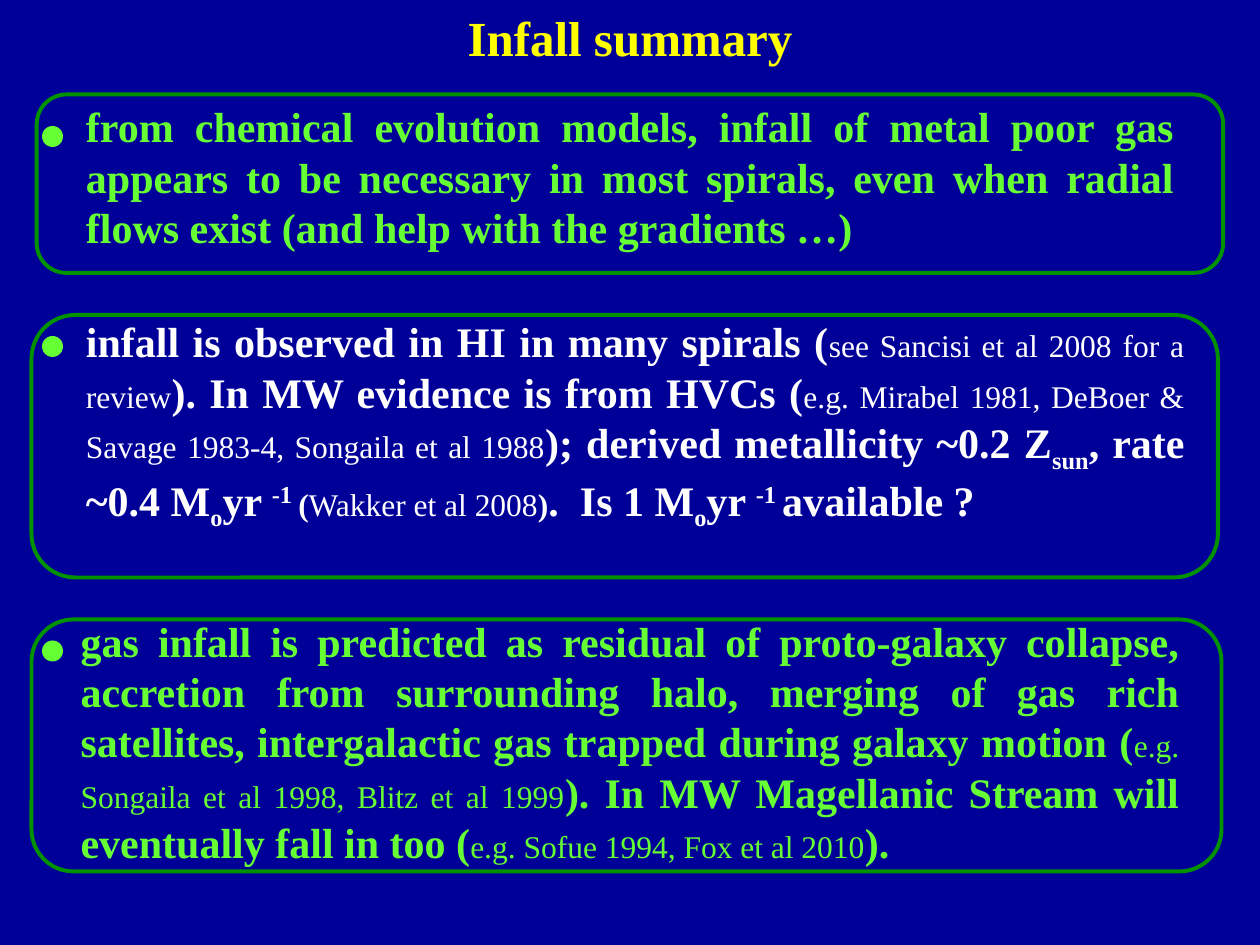
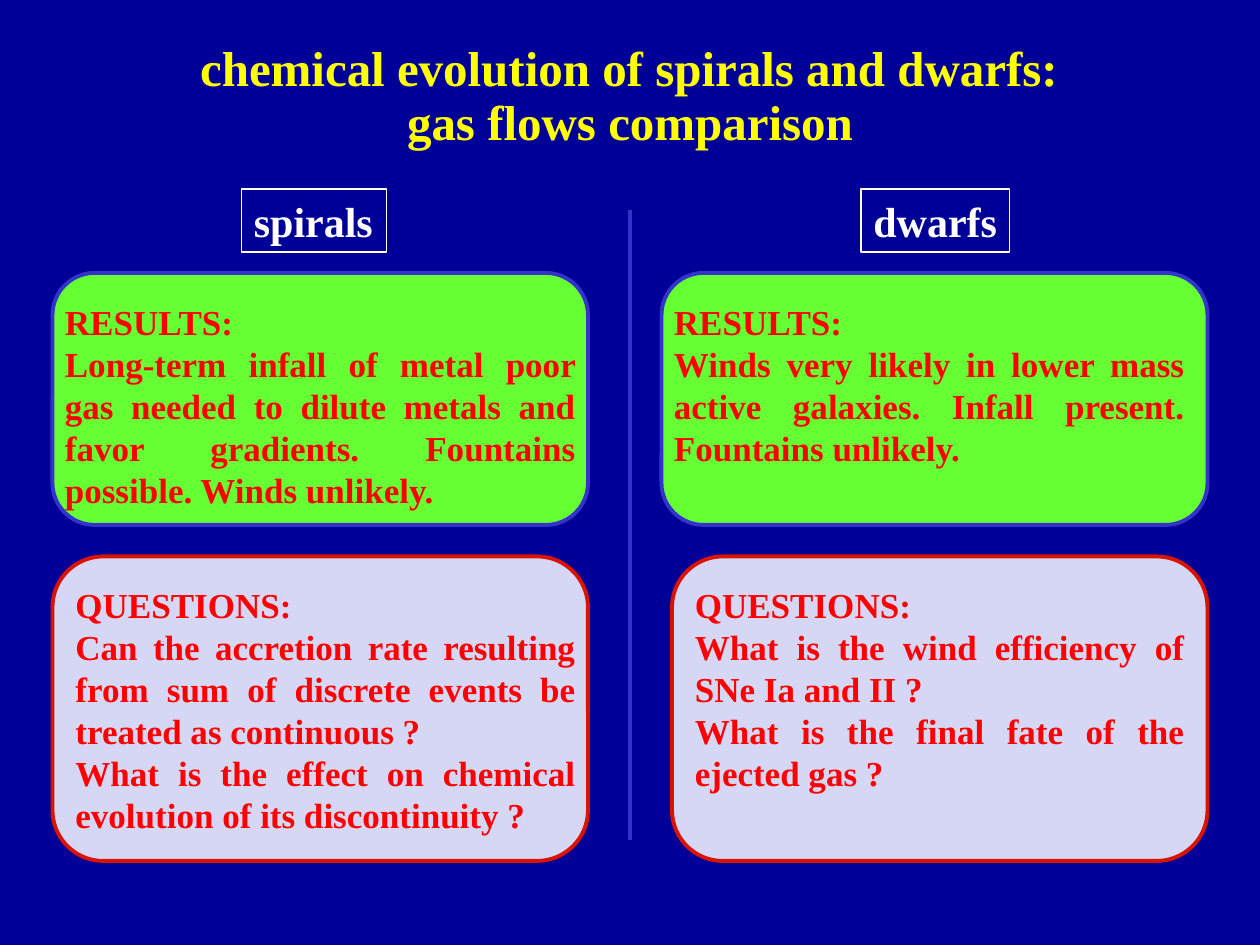
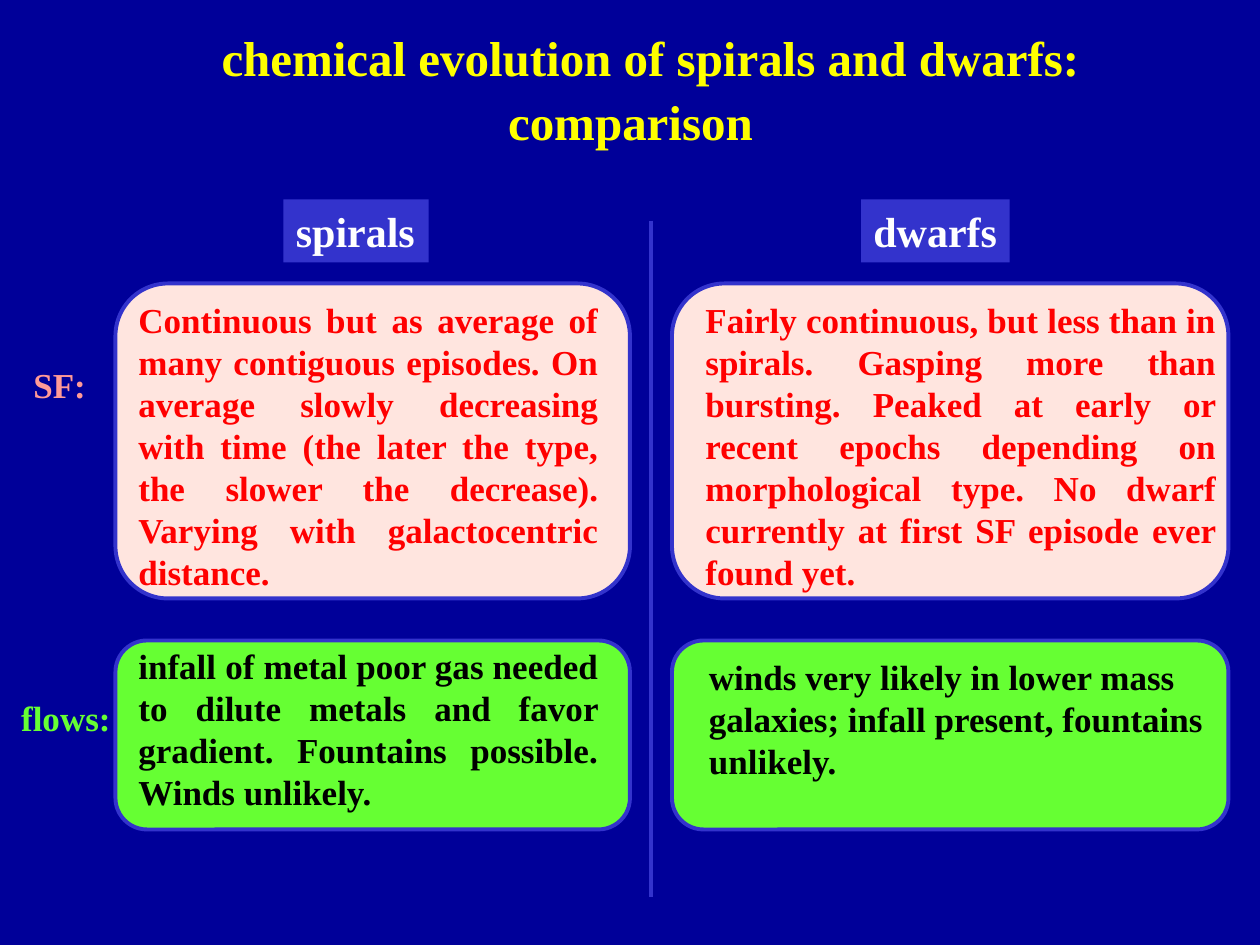
from typing import NamedTuple, Optional

from lxml import etree
from pptx import Presentation
from pptx.dml.color import RGBColor
from pptx.enum import shapes, text
from pptx.oxml.ns import qn
from pptx.util import Pt

# Shared look
NAVY = RGBColor(0x00, 0x00, 0x99)
YELLOW = RGBColor(0xFF, 0xFF, 0x00)
WHITE = RGBColor(0xFF, 0xFF, 0xFF)
BLACK = RGBColor(0x00, 0x00, 0x00)
RED = RGBColor(0xFF, 0x00, 0x00)
LIME = RGBColor(0x66, 0xFF, 0x33)
GREEN = RGBColor(0x00, 0x92, 0x00)
INDIGO = RGBColor(0x33, 0x33, 0xCC)
LAVENDER = RGBColor(0xD6, 0xD6, 0xF5)
BRICK = RGBColor(0xDA, 0x13, 0x01)
BLUSH = RGBColor(0xFF, 0xE5, 0xDF)
SALMON = RGBColor(0xFF, 0x9A, 0x97)

FONT = "Times New Roman"
TITLE_SIZE, LARGE, MEDIUM, SMALL = 28, 24, 20, 18
RULE_WIDTH = 2.25
SUB, SUPER = -25, 30
LEFT, CENTER, JUSTIFY = text.PP_ALIGN.LEFT, text.PP_ALIGN.CENTER, text.PP_ALIGN.JUSTIFY


class Box(NamedTuple):
    left: float
    top: float
    width: float
    height: float


class Span(NamedTuple):
    words: str
    size: float = LARGE
    bold: bool = True
    base: int = 0


class Line(NamedTuple):
    spans: list[Span]
    align: int = JUSTIFY


class Note(NamedTuple):
    box: Box
    lines: list[Line]
    color: RGBColor
    wrap: bool = True
    fill: Optional[RGBColor] = None
    border: Optional[RGBColor] = None


class Panel(NamedTuple):
    box: Box
    fill: Optional[RGBColor]
    border: RGBColor


def cite(words: str) -> Span:
    return Span(words, SMALL, False)


def medium(words: str, align: int = JUSTIFY) -> Line:
    return Line([Span(words, MEDIUM)], align)


def label(words: str, size: float, box: Box, color: RGBColor,
          fill: Optional[RGBColor] = None, border: Optional[RGBColor] = None) -> Note:
    return Note(box, [Line([Span(words, size)], LEFT)], color, False, fill, border)


# Drawing
def in_points(box: Box) -> list[int]:
    return [Pt(length) for length in box]


def write(frame, lines: list[Line], color: RGBColor) -> None:
    for index, line in enumerate(lines):
        paragraph = frame.add_paragraph() if index else frame.paragraphs[0]
        paragraph.alignment = line.align
        for span in line.spans:
            run = paragraph.add_run()
            run.text = span.words
            font_format = {"name": FONT, "size": Pt(span.size), "bold": span.bold}
            for attribute, value in font_format.items():
                setattr(run.font, attribute, value)
            run.font.color.rgb = color
            if span.base:
                run.font._element.set("baseline", str(span.base * 1000))


def paint(shape, fill: Optional[RGBColor], border: Optional[RGBColor], width: float) -> None:
    if fill is None:
        shape.fill.background()
    else:
        shape.fill.solid()
        shape.fill.fore_color.rgb = fill
    if border is None:
        shape.line.fill.background()
    else:
        shape.line.color.rgb = border
        shape.line.width = Pt(width)


def add_note(slide, note: Note) -> None:
    shape = slide.shapes.add_textbox(*in_points(note.box))
    paint(shape, note.fill, note.border, 0.75)
    frame = shape.text_frame
    frame_format = {"word_wrap": note.wrap, "auto_size": text.MSO_AUTO_SIZE.SHAPE_TO_FIT_TEXT}
    for attribute, value in frame_format.items():
        setattr(frame, attribute, value)
    write(frame, note.lines, note.color)


def add_panel(slide, panel: Panel, kind: int = shapes.MSO_SHAPE.ROUNDED_RECTANGLE) -> None:
    shape = slide.shapes.add_shape(kind, *in_points(panel.box))
    shape.shadow.inherit = False
    paint(shape, panel.fill, panel.border, RULE_WIDTH)


def add_divider(slide, x: float, top: float, bottom: float) -> None:
    divider = slide.shapes.add_connector(
        shapes.MSO_CONNECTOR.STRAIGHT, Pt(x), Pt(top), Pt(x), Pt(bottom))
    divider.line.color.rgb = INDIGO
    divider.line.width = Pt(RULE_WIDTH)
    etree.SubElement(divider._element.spPr, qn("a:effectLst"))


def add_titled_slide(deck, words: str, box: Box):
    slide = deck.slides.add_slide(deck.slide_layouts[5])
    title = slide.shapes.title
    for side, length in zip(("left", "top", "width", "height"), in_points(box)):
        setattr(title, side, length)
    paint(title, NAVY, None, 0)
    frame_format = {"vertical_anchor": text.MSO_ANCHOR.MIDDLE, "word_wrap": True,
                    "auto_size": text.MSO_AUTO_SIZE.NONE}
    for attribute, value in frame_format.items():
        setattr(title.text_frame, attribute, value)
    write(title.text_frame, [Line([Span(words, TITLE_SIZE)], CENTER)], YELLOW)
    return slide


def add_comparison(deck, subject: str, title_box: Box, headline_at: tuple[float, float],
                   divider: tuple[float, float, float],
                   panels: list[Panel], notes: list[Note]) -> None:
    slide = add_titled_slide(deck, subject, title_box)
    for panel in panels:
        add_panel(slide, panel)
    headline = label("chemical evolution of spirals and dwarfs:", TITLE_SIZE,
                     Box(*headline_at, 505.5, 41), YELLOW, NAVY)
    add_note(slide, headline)
    add_divider(slide, *divider)
    for note in notes:
        add_note(slide, note)


def column_heads(spirals_left: float, top: float, fill: RGBColor,
                 border: Optional[RGBColor] = None) -> list[Note]:
    heads = (("spirals", spirals_left, 83), ("dwarfs", 492, 85))
    return [label(words, LARGE, Box(left, top, width, 36), WHITE, fill, border)
            for words, left, width in heads]


# Slides
def infall_summary(deck) -> None:
    slide = add_titled_slide(deck, "Infall summary", Box(237, 0, 246, 42))
    chemical_models = [Span(
        "from chemical evolution models, infall of metal poor gas appears to be necessary "
        "in most spirals, even when radial flows exist (and help with the gradients …)")]
    solar_rate = [Span("o", base=SUB), Span("yr "), Span("-1 ", base=SUPER)]
    observed = [
        Span("infall is observed in HI in many spirals ("),
        cite("see Sancisi et al 2008 for a review"),
        Span("). In MW evidence is from HVCs ("),
        cite("e.g. Mirabel 1981, DeBoer & Savage 1983-4, Songaila et al 1988"),
        Span("); derived metallicity ~0.2 Z"), Span("sun", base=SUB),
        Span(", rate ~0.4 M"), *solar_rate,
        Span("(", SMALL), cite("Wakker et al 2008"), Span(")", SMALL),
        Span(".  Is 1 M"), *solar_rate, Span("available ?")]
    predicted = [
        Span("gas infall is predicted as residual of proto-galaxy collapse, accretion from "
             "surrounding halo, merging of gas rich satellites, intergalactic gas trapped "
             "during galaxy motion ("),
        cite("e.g. Songaila et al 1998, Blitz et al 1999"),
        Span("). In MW Magellanic Stream will eventually fall in too ("),
        cite("e.g. Sofue 1994, Fox et al 2010"), Span(").")]
    points = [
        (chemical_models, LIME, Box(42, 54, 636, 94), Box(21, 54, 678, 102), 72),
        (observed, WHITE, Box(42, 177, 642, 124), Box(18, 180, 678, 150), 192),
        (predicted, LIME, Box(39, 348, 642, 152), Box(18, 354, 680, 144), 366)]
    for spans, color, words_box, outline, dot_top in points:
        add_note(slide, Note(words_box, [Line(spans)], color))
        add_panel(slide, Panel(outline, None, GREEN))
        add_panel(slide, Panel(Box(24, dot_top, 12, 12), LIME, None), shapes.MSO_SHAPE.OVAL)


def gas_flows(deck) -> None:
    results, questions = medium("RESULTS:"), medium("QUESTIONS:", LEFT)
    panels = [
        Panel(Box(384, 318, 306, 174), LAVENDER, BRICK),
        Panel(Box(30, 318, 306, 174), LAVENDER, BRICK),
        Panel(Box(378, 156, 312, 144), LIME, INDIGO),
        Panel(Box(30, 156, 306, 144), LIME, INDIGO)]
    notes = column_heads(138, 108, NAVY, WHITE) + [
        Note(Box(30, 168, 306, 127), [results, medium(
            "Long-term infall of metal poor gas needed to dilute metals and favor gradients. "
            "Fountains possible. Winds unlikely.")], RED),
        Note(Box(378, 168, 306, 103), [results, medium(
            "Winds very likely in lower mass active galaxies. Infall present. "
            "Fountains unlikely.")], RED),
        Note(Box(36, 330, 300, 152), [
            questions,
            medium("Can the accretion rate resulting from sum of discrete events "
                   "be treated as continuous ?"),
            medium("What is the effect on chemical evolution of its discontinuity ?")], RED),
        Note(Box(390, 330, 294, 127), [
            questions,
            medium("What is the wind efficiency of SNe Ia and II ?"),
            medium("What is the final fate of the ejected gas ?")], RED)]
    add_comparison(deck, "gas flows comparison", Box(108, 48, 504, 42), (107.25, 18),
                   (360, 120, 480), panels, notes)


def star_formation_and_flows(deck) -> None:
    columns = ((384, 318), (66, 294))
    rows = ((366, 108, LIME), (162, 180, BLUSH))
    panels = [Panel(Box(left, top, width, height), fill, INDIGO)
              for top, height, fill in rows for left, width in columns]
    notes = column_heads(162, 114, INDIGO) + [
        label("SF:", MEDIUM, Box(12, 204, 44.5, 31), SALMON),
        Note(Box(72, 167, 277, 177), [medium(
            "Continuous but as average of many contiguous episodes. On average slowly "
            "decreasing with time (the later the type, the slower the decrease). "
            "Varying with galactocentric distance.")], RED),
        label("flows:", MEDIUM, Box(5, 394.5, 65.5, 31), LIME),
        Note(Box(72, 365, 277, 103), [medium(
            "infall of metal poor gas needed to dilute metals and favor gradient. "
            "Fountains possible. Winds unlikely.")], BLACK),
        Note(Box(396, 167, 306, 177), [medium(
            "Fairly continuous, but less than in spirals. Gasping more than bursting. "
            "Peaked at early or recent epochs depending on morphological type. "
            "No dwarf currently at first SF episode ever found yet.")], RED),
        Note(Box(398, 371, 297.5, 79), [medium(
            "winds very likely in lower mass galaxies; infall present, "
            "fountains unlikely.", LEFT)], BLACK)]
    add_comparison(deck, "comparison", Box(119.5, 48, 481.5, 42), (119.5, 12),
                   (372, 126, 512.5), panels, notes)


def main() -> None:
    deck = Presentation()
    deck.slide_width, deck.slide_height = Pt(720), Pt(540)
    backdrop = deck.slide_master.background.fill
    backdrop.solid()
    backdrop.fore_color.rgb = NAVY
    infall_summary(deck)
    gas_flows(deck)
    star_formation_and_flows(deck)
    deck.save("out.pptx")


if __name__ == "__main__":
    main()
